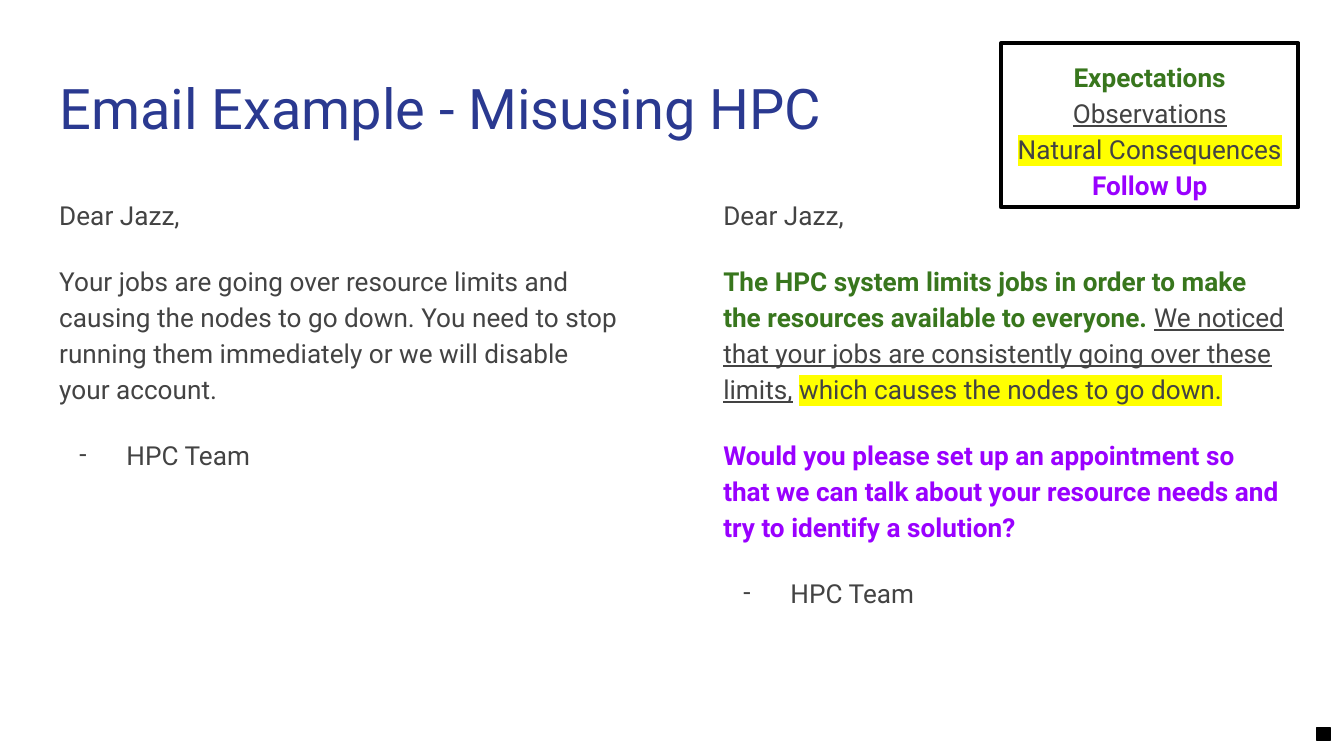
from lxml import etree
from pptx import Presentation
from pptx.dml.color import RGBColor
from pptx.enum.shapes import MSO_SHAPE
from pptx.enum.text import MSO_ANCHOR, MSO_AUTO_SIZE, PP_ALIGN
from pptx.oxml.ns import qn
from pptx.util import Cm, Pt

RECT = MSO_SHAPE.RECTANGLE
TOP = MSO_ANCHOR.TOP
NO_FIT = MSO_AUTO_SIZE.NONE
LEFT, CENTER = PP_ALIGN.LEFT, PP_ALIGN.CENTER

FONT = "Roboto"
BLUE, GRAY, BLACK = "2A3990", "434343", "000000"
STYLES = {
    "plain": {"color": GRAY},
    "expectation": {"color": "38761D", "bold": True},
    "observation": {"color": GRAY, "underline": True},
    "consequence": {"color": GRAY, "highlight": "FFFF00"},
    "follow_up": {"color": "9900FF", "bold": True},
}

# Each paragraph is a list of (text, style) runs.
TITLE = "Email Example - Misusing HPC"
GREETING = [("Dear Jazz,", "plain")]
SIGNATURE = [("HPC Team", "plain")]
BLUNT_EMAIL = [
    GREETING,
    [("Your jobs are going over resource limits and causing the nodes to go "
      "down. You need to stop running them immediately or we will disable "
      "your account.", "plain")],
    SIGNATURE,
]
KIND_EMAIL = [
    GREETING,
    [("The HPC system limits jobs in order to make the resources available "
      "to everyone. ", "expectation"),
     ("We noticed that your jobs are consistently going over these limits,",
      "observation"),
     (" ", "plain"),
     ("which causes the nodes to go down.", "consequence")],
    [("Would you please set up an appointment so that we can talk about your "
      "resource needs and try to identify a solution?", "follow_up")],
    SIGNATURE,
]
LEGEND = [
    [("Expectations", "expectation")],
    [("Observations", "observation")],
    [("Natural Consequences", "consequence")],
    [("Follow Up", "follow_up")],
]


def rgb(value):
    return RGBColor.from_string(value)


def format_run(r, size, color, bold=False, underline=False, highlight=None):
    r.font.name = FONT
    r.font.size = Pt(size)
    r.font.color.rgb = rgb(color)
    r.font.bold = bold
    r.font.underline = underline
    if highlight:
        mark = etree.Element(qn("a:highlight"))
        etree.SubElement(mark, qn("a:srgbClr"), val=highlight)
        r.font._element.find(qn("a:solidFill")).addnext(mark)


def set_dash_bullet(p):
    pPr = p._p.get_or_add_pPr()
    pPr.set("marL", str(Cm(1.27)))
    pPr.set("indent", str(-Cm(0.89)))
    color = etree.SubElement(pPr, qn("a:buClr"))
    etree.SubElement(color, qn("a:srgbClr"), val=GRAY)
    etree.SubElement(pPr, qn("a:buFont"), typeface=FONT)
    etree.SubElement(pPr, qn("a:buChar"), char="-")


def set_frame(tf):
    tf.word_wrap = True
    tf.auto_size = NO_FIT
    tf.vertical_anchor = TOP
    tf.margin_left = tf.margin_right = Cm(0.25)
    tf.margin_top = tf.margin_bottom = Cm(0.25)


def fill_text(tf, paragraphs, align=LEFT, gap=0):
    set_frame(tf)
    for i, runs in enumerate(paragraphs):
        p = tf.paragraphs[0] if i == 0 else tf.add_paragraph()
        p.alignment = align
        p.line_spacing = 1.15
        p.space_before = Pt(gap if i else 0)
        if runs is SIGNATURE:
            set_dash_bullet(p)
        for text, style in runs:
            r = p.add_run()
            r.text = text
            format_run(r, 14, **STYLES[style])


def add_rect(s, left, top, width, height, line_width):
    sp = s.shapes.add_shape(RECT, Cm(left), Cm(top), Cm(width), Cm(height))
    sp.shadow.inherit = False
    sp.line.color.rgb = rgb(BLACK)
    sp.line.width = Pt(line_width)
    return sp


prs = Presentation()
prs.slide_width, prs.slide_height = Cm(25.4), Cm(14.29)
s = prs.slides.add_slide(prs.slide_layouts[5])

title = s.shapes.title
title.left, title.top, title.width, title.height = Cm(0.87), Cm(1.14), Cm(23.67), Cm(1.68)
title.text_frame.text = TITLE
set_frame(title.text_frame)
title.text_frame.paragraphs[0].alignment = LEFT
format_run(title.text_frame.paragraphs[0].runs[0], 30, BLUE)

for left, email in ((0.87, BLUNT_EMAIL), (13.42, KIND_EMAIL)):
    box = s.shapes.add_textbox(Cm(left), Cm(3.43), Cm(11.1), Cm(9.27))
    fill_text(box.text_frame, email, gap=16)

legend = add_rect(s, 18.92, 0.82, 5.62, 3.1, 2.25)
legend.fill.background()
fill_text(legend.text_frame, LEGEND, align=CENTER)

corner = add_rect(s, 24.89, 13.75, 0.25, 0.25, 0.75)
corner.fill.solid()
corner.fill.fore_color.rgb = rgb(BLACK)

prs.save("out.pptx")
